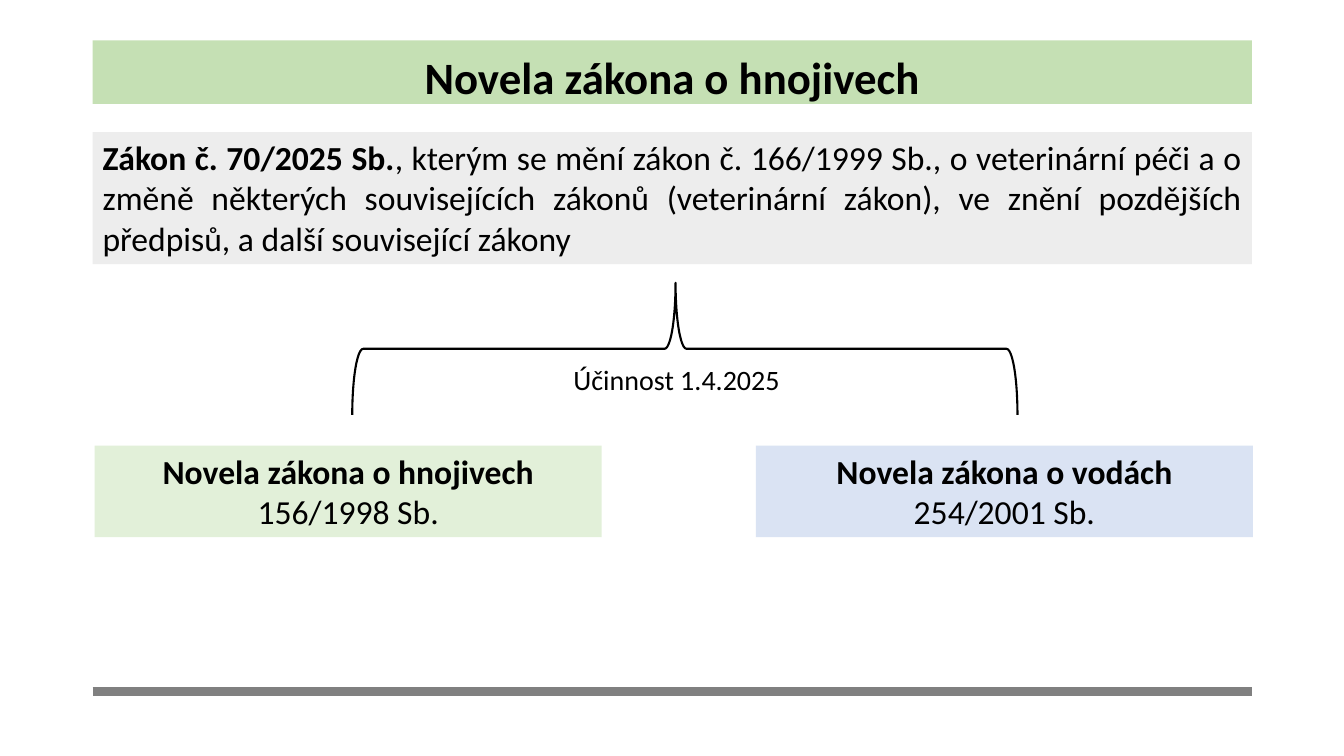
from pptx import Presentation
from pptx import util as u
from pptx.dml import color
from pptx.enum import shapes, text
from pptx.oxml import xmlchemy

Pt = u.Pt
ALIGN = text.PP_ALIGN
LEFT, WIDE = 66.24, 828


def paint(hue):
    return color.RGBColor.from_string(hue)


def write(frame, lines, size, align):
    frame.word_wrap = True
    for i, runs in enumerate(lines):
        para = frame.paragraphs[0] if i == 0 else frame.add_paragraph()
        para.alignment = align
        for words, bold in runs:
            run = para.add_run()
            run.text = words
            font = run.font
            font.name, font.size, font.bold = "Calibri", Pt(size), bold
            font.color.rgb = paint("000000")


def add_title(slide, x, y, w, h):
    title = slide.shapes.title
    title.left, title.top, title.width, title.height = map(Pt, (x, y, w, h))
    title.fill.solid()
    title.fill.fore_color.rgb = paint("C5E0B4")
    frame = title.text_frame
    frame.auto_size = text.MSO_AUTO_SIZE.NONE
    frame.vertical_anchor = text.MSO_ANCHOR.MIDDLE
    write(frame, [[("Novela zákona o hnojivech", True)]], 32, ALIGN.CENTER)
    para = frame.paragraphs[0]
    para.line_spacing = 1.15
    para.space_before, para.space_after = Pt(0), Pt(10)


def add_panel(slide, x, y, w, h, hue, lines, align):
    panel = slide.shapes.add_shape(shapes.MSO_SHAPE.RECTANGLE, *map(Pt, (x, y, w, h)))
    panel.shadow.inherit = False
    panel.fill.solid()
    panel.fill.fore_color.rgb = paint(hue)
    panel.line.fill.background()
    panel.text_frame.vertical_anchor = text.MSO_ANCHOR.TOP
    write(panel.text_frame, lines, 24, align)


def add_brace(slide, x, y, w, h):
    left, top = x + (w - h) / 2, y + (h - w) / 2
    brace = slide.shapes.add_shape(shapes.MSO_SHAPE.RIGHT_BRACE, *map(Pt, (left, top, h, w)))
    brace.rotation = 270
    brace.adjustments[0], brace.adjustments[1] = 0.083, 0.486
    brace.shadow.inherit = False
    brace.fill.background()
    brace.line.color.rgb = paint("000000")
    brace.line.width = Pt(1.5)
    label = slide.shapes.add_textbox(*map(Pt, (x + 150.84, y + 53.64, 210.24, 31.68)))
    write(label.text_frame, [[("Účinnost 1.4.2025", False)]], 20, ALIGN.LEFT)


def add_rule(slide, x, y, w):
    rule = slide.shapes.add_connector(shapes.MSO_CONNECTOR.STRAIGHT, *map(Pt, (x, y, x + w, y)))
    rule.line.color.rgb = paint("808080")
    rule.line.width = Pt(6)
    props = rule._element.spPr
    props.append(xmlchemy.OxmlElement("a:effectLst"))


def build():
    deck = Presentation()
    deck.slide_width, deck.slide_height = Pt(960), Pt(540)
    slide = deck.slides.add_slide(deck.slide_layouts[5])
    add_rule(slide, LEFT, 493.92, WIDE)
    add_title(slide, LEFT, 28.8, WIDE, 45.36)
    act = [[
        ("Zákon č. 70/2025 Sb.", True),
        (", kterým se mění zákon č. 166/1999 Sb., o veterinární péči a o změně některých "
         "souvisejících zákonů (veterinární zákon), ve znění pozdějších předpisů, "
         "a další související zákony", False),
    ]]
    add_panel(slide, LEFT, 94.32, WIDE, 94.32, "EDEDED", act, ALIGN.JUSTIFY)
    for x, w, hue, name, code in (
        (67.68, 362.16, "E2F0D9", "Novela zákona o hnojivech", "156/1998 Sb."),
        (540, 354.96, "DAE3F3", "Novela zákona o vodách", "254/2001 Sb."),
    ):
        lines = [[(name, True)], [(code, False)]]
        add_panel(slide, x, 318.24, w, 65.52, hue, lines, ALIGN.CENTER)
    add_brace(slide, 251.64, 201.96, 475.2, 94.32)
    deck.save("out.pptx")


if __name__ == "__main__":
    build()
